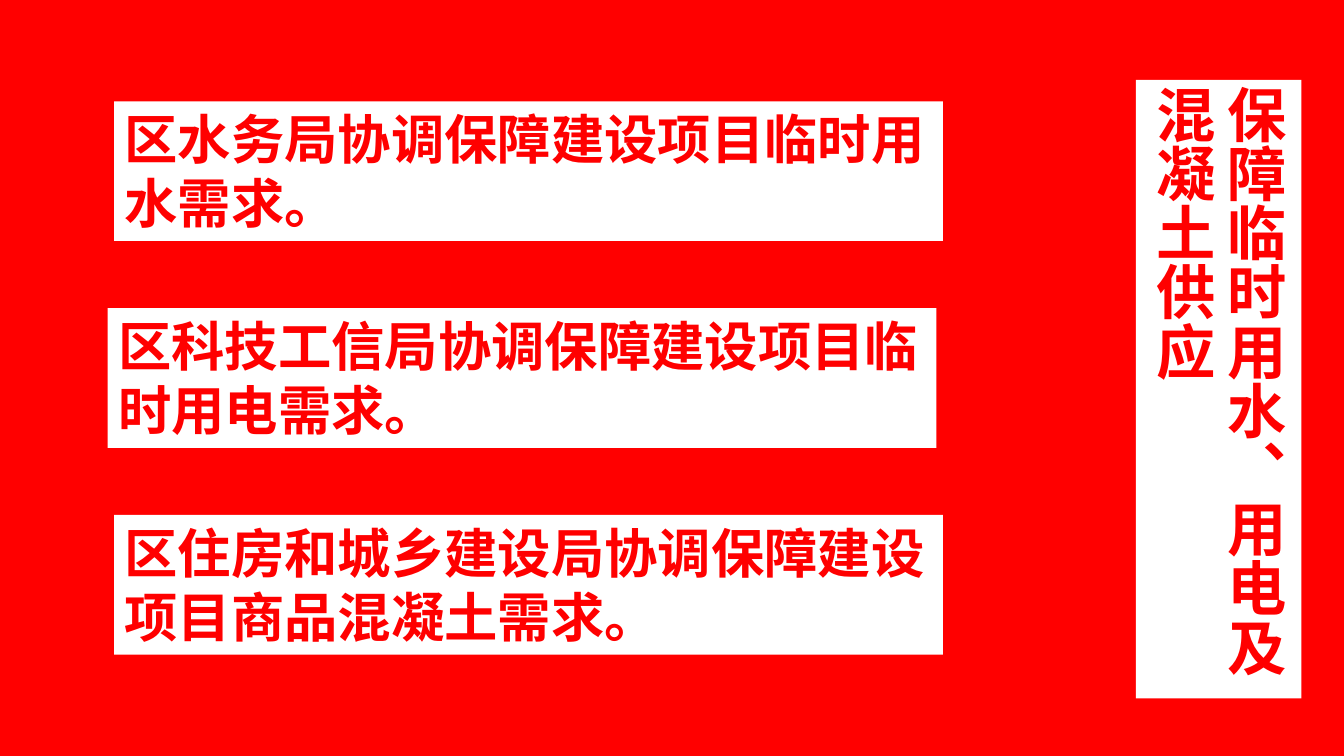
import pptx
import pptx.dml.color
import pptx.enum.lang
import pptx.enum.text
import pptx.util

Inches = pptx.util.Inches
RED = pptx.dml.color.RGBColor(0xFF, 0x00, 0x00)
WHITE = pptx.dml.color.RGBColor(0xFF, 0xFF, 0xFF)
FONT = "Calibri"

TITLE = "保障临时用水、用电及混凝土供应"
DUTIES = [
    (1.07, "区水务局协调保障建设项目临时用水需求。"),
    (1.01, "区科技工信局协调保障建设项目临时用电需求。"),
    (1.07, "区住房和城乡建设局协调保障建设项目商品混凝土需求。"),
]
DUTY_TOP = 0.95
DUTY_STEP = 1.94


def write_text(sp, text, *, size, color=RED, bold=True):
    """Fill a white panel with one left-aligned paragraph."""
    sp.fill.solid()
    sp.fill.fore_color.rgb = WHITE
    tf = sp.text_frame
    tf.word_wrap = True
    tf.auto_size = pptx.enum.text.MSO_AUTO_SIZE.SHAPE_TO_FIT_TEXT
    tf.vertical_anchor = pptx.enum.text.MSO_ANCHOR.TOP
    p = tf.paragraphs[0]
    p.alignment = pptx.enum.text.PP_ALIGN.LEFT
    r = p.add_run()
    r.text = text
    r.font.name = FONT
    r.font.size = pptx.util.Pt(size)
    r.font.bold = bold
    r.font.color.rgb = color
    r.font.language_id = pptx.enum.lang.MSO_LANGUAGE_ID.SIMPLIFIED_CHINESE


def add_vertical_title(slide, text):
    """Turn the title placeholder into a vertical panel on the right."""
    sp = slide.shapes.title
    sp.left, sp.top = Inches(10.65), Inches(0.75)
    sp.width, sp.height = Inches(1.55), Inches(5.8)
    write_text(sp, text, size=40)
    sp.text_frame._txBody.bodyPr.set("vert", "eaVert")


def add_duty(slide, left, top, text):
    """Add one panel naming a bureau's duty."""
    sp = slide.shapes.add_textbox(
        Inches(left), Inches(top), Inches(7.77), Inches(1.31))
    write_text(sp, text, size=36)


def main():
    """Build the slide and save it."""
    prs = pptx.Presentation()
    prs.slide_width, prs.slide_height = Inches(12.6), Inches(7.09)
    slide = prs.slides.add_slide(prs.slide_layouts.get_by_name("Title Only"))
    slide.background.fill.solid()
    slide.background.fill.fore_color.rgb = RED
    add_vertical_title(slide, TITLE)
    for i, (left, text) in enumerate(DUTIES):
        add_duty(slide, left, DUTY_TOP + i * DUTY_STEP, text)
    prs.save("out.pptx")


if __name__ == "__main__":
    main()
